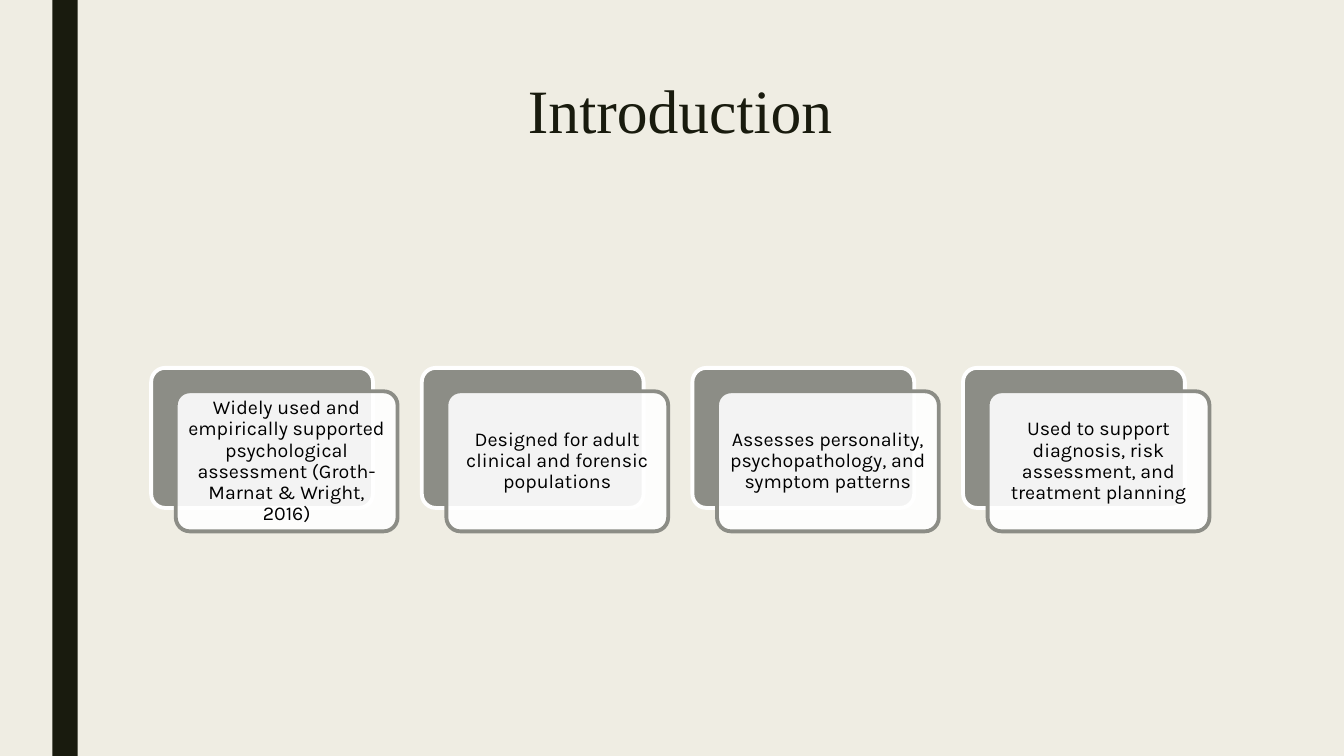
from dataclasses import dataclass

from lxml import etree
from pptx import Presentation
from pptx import util as u
from pptx.dml.color import RGBColor
from pptx.enum import shapes, text
from pptx.oxml import ns


@dataclass(frozen=True)
class Theme:
    background: RGBColor = RGBColor.from_string("EFEDE3")
    dark: RGBColor = RGBColor.from_string("191B0E")
    grey: RGBColor = RGBColor.from_string("8C8D86")
    white: RGBColor = RGBColor.from_string("FFFFFF")
    black: RGBColor = RGBColor.from_string("000000")
    title_font: str = "Times New Roman"
    body_font: str = "Karla"
    title_size: u.Pt = u.Pt(44)
    body_size: u.Pt = u.Pt(14)
    outline: u.Pt = u.Pt(2.75)


THEME = Theme()
TITLE_ONLY = 5
SLIDE_W, SLIDE_H = u.Cm(33.87), u.Cm(19.05)

CARD_LEFT, CARD_TOP = u.Cm(3.81), u.Cm(9.27)
CARD_W, CARD_H = u.Cm(5.59), u.Cm(3.53)
CARD_PITCH = u.Cm(6.82)
FRONT_DX, FRONT_DY = u.Cm(0.62), u.Cm(0.59)
CARD_INSET = u.Cm(0.15)

CARD_TEXTS = [
    "Widely used and empirically supported psychological assessment (Groth-Marnat & Wright, 2016)",
    "Designed for adult clinical and forensic populations",
    "Assesses personality, psychopathology, and symptom patterns",
    "Used to support diagnosis, risk assessment, and treatment planning",
]


def write_centred(tf, words, font, size, color, line_spacing):
    tf.word_wrap = True
    p = tf.paragraphs[0]
    p.alignment = text.PP_ALIGN.CENTER
    p.line_spacing = line_spacing
    r = p.add_run()
    r.text = words
    r.font.name = font
    r.font.size = size
    r.font.color.rgb = color


def set_opacity(sp, percent):
    color = sp.fill._xPr.find(ns.qn("a:solidFill"))[0]
    etree.SubElement(color, ns.qn("a:alpha"), val=str(percent * 1000))


def add_title(slide, words):
    sp = slide.shapes.title
    sp.left, sp.top, sp.width, sp.height = u.Cm(3.81), u.Cm(1.9), u.Cm(26.67), u.Cm(4.11)
    tf = sp.text_frame
    tf.auto_size = text.MSO_AUTO_SIZE.NONE
    tf.vertical_anchor = text.MSO_ANCHOR.TOP
    write_centred(tf, words, THEME.title_font, THEME.title_size, THEME.dark, 0.89)


def add_side_bar(slide):
    sp = slide.shapes.add_shape(
        shapes.MSO_SHAPE.RECTANGLE, u.Cm(1.32), 0, u.Cm(0.64), SLIDE_H)
    sp.shadow.inherit = False
    sp.fill.solid()
    sp.fill.fore_color.rgb = THEME.dark
    sp.line.fill.background()


def add_panel(group, left, top, fill, line):
    sp = group.shapes.add_shape(
        shapes.MSO_SHAPE.ROUNDED_RECTANGLE, left, top, CARD_W, CARD_H)
    sp.adjustments[0] = 0.1
    sp.shadow.inherit = False
    sp.fill.solid()
    sp.fill.fore_color.rgb = fill
    sp.line.color.rgb = line
    sp.line.width = THEME.outline
    return sp


def add_card(group, left, words):
    """Add a grey panel with a translucent text panel offset in front of it."""
    add_panel(group, left, CARD_TOP, THEME.grey, THEME.white)
    front = add_panel(group, left + FRONT_DX, CARD_TOP + FRONT_DY, THEME.white, THEME.grey)
    set_opacity(front, 90)
    tf = front.text_frame
    tf.margin_left = tf.margin_right = tf.margin_top = tf.margin_bottom = CARD_INSET
    tf.vertical_anchor = text.MSO_ANCHOR.MIDDLE
    write_centred(tf, words, THEME.body_font, THEME.body_size, THEME.black, 0.9)


def main():
    prs = Presentation()
    prs.slide_width, prs.slide_height = SLIDE_W, SLIDE_H
    slide = prs.slides.add_slide(prs.slide_layouts[TITLE_ONLY])
    slide.background.fill.solid()
    slide.background.fill.fore_color.rgb = THEME.background

    add_side_bar(slide)
    add_title(slide, "Introduction")
    cards = slide.shapes.add_group_shape()
    for i, words in enumerate(CARD_TEXTS):
        add_card(cards, CARD_LEFT + i * CARD_PITCH, words)

    prs.save("out.pptx")


if __name__ == "__main__":
    main()
